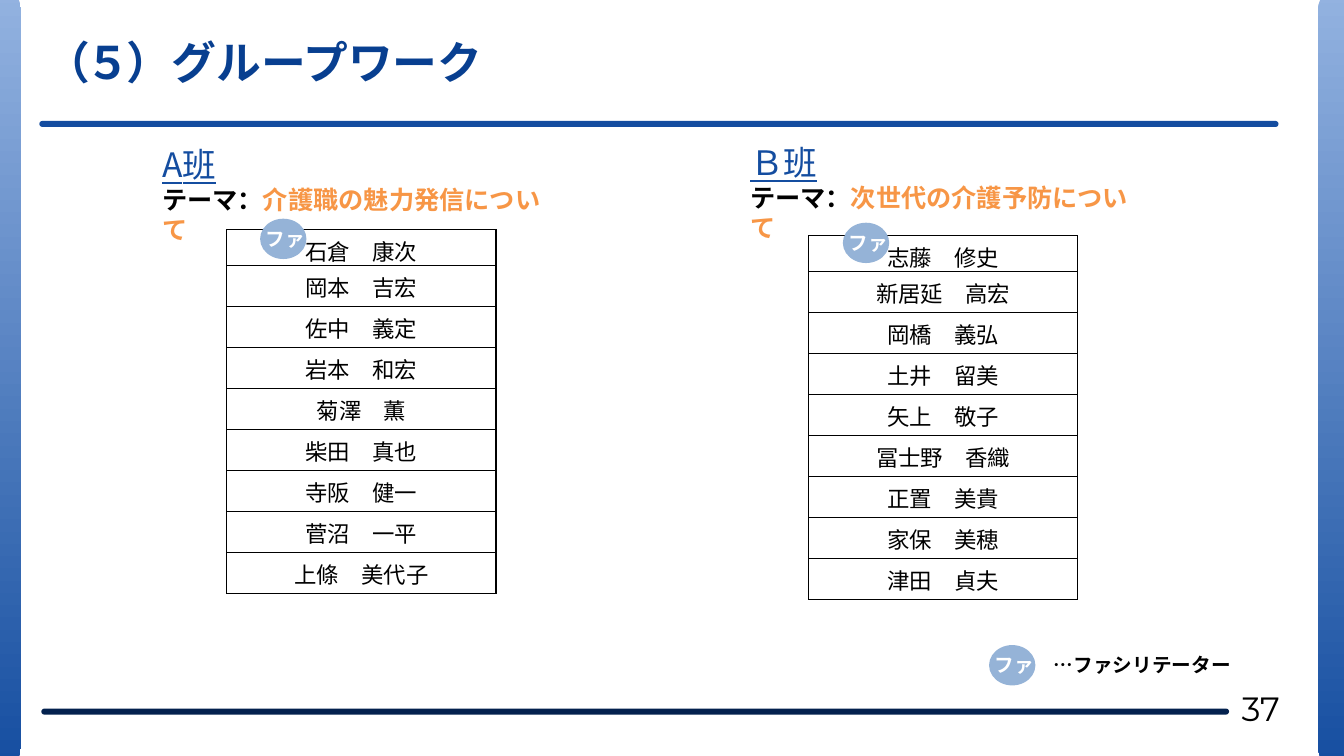
import dataclasses
import typing

import pptx
import pptx.dml.color
import pptx.enum.shapes
import pptx.enum.text
import pptx.oxml.ns
import pptx.oxml.xmlchemy
import pptx.util
import lxml.etree

Inches = pptx.util.Inches
Pt = pptx.util.Pt
Shape = pptx.enum.shapes.MSO_SHAPE
Align = pptx.enum.text.PP_ALIGN
Anchor = pptx.enum.text.MSO_ANCHOR
qn = pptx.oxml.ns.qn

COLORS = {
    "blue": "144DA0", "sky": "95B4E1", "navy": "03214E", "title": "083F90",
    "orange": "F79646", "badge": "95B3D7", "black": "000000", "white": "FFFFFF",
}
NOTO = "Noto Sans CJK JP"

# Text formats
STYLES: dict[str, dict[str, typing.Any]] = {
    "title": {"size": Pt(32), "bold": True, "name": NOTO},
    "team": {"size": Pt(24), "underline": True, "name": NOTO},
    "theme": {"size": Pt(18), "bold": True, "name": "Calibri"},
    "member": {"size": Pt(16), "name": NOTO},
    "badge": {"size": Pt(14), "bold": True, "name": NOTO},
    "page": {"size": Pt(24), "name": "Montserrat"},
}


@dataclasses.dataclass
class Box:
    left: float
    top: float
    width: float
    height: float

    def place(self) -> tuple:
        return tuple(Inches(v) for v in (self.left, self.top, self.width, self.height))


@dataclasses.dataclass
class Part:
    text: str
    style: str
    color: str = "black"
    space: int = 0


@dataclasses.dataclass
class Team:
    name: str
    theme: str
    head: Box
    grid: Box
    mark: tuple[float, float]
    people: list[str]


TEAMS = [
    Team("A班", "介護職の魅力発信について", Box(1.51, 1.38, 4.01, 0.81),
         Box(2.25, 2.28, 2.67, 3.61), (2.58, 2.17),
         ["石倉　康次", "岡本　吉宏", "佐中　義定", "岩本　和宏", "菊澤　薫",
          "柴田　真也", "寺阪　健一", "菅沼　一平", "上條　美代子"]),
    Team("Ｂ班", "次世代の介護予防について", Box(7.34, 1.36, 4.01, 1.21),
         Box(8.02, 2.34, 2.67, 3.61), (8.36, 2.21),
         ["志藤　修史", "新居延　高宏", "岡橋　義弘", "土井　留美", "矢上　敬子",
          "冨士野　香織", "正置　美貴", "家保　美穂", "津田　貞夫"]),
]


def tint(name: str) -> pptx.dml.color.RGBColor:
    return pptx.dml.color.RGBColor.from_string(COLORS[name])


def write(para, parts: list[Part]) -> None:
    for part in parts:
        run = para.add_run()
        run.text = part.text
        for key, value in STYLES[part.style].items():
            setattr(run.font, key, value)
        run.font.color.rgb = tint(part.color)
        props = run.font._element
        latin = props.find(qn("a:latin"))
        east = lxml.etree.Element(qn("a:ea"), typeface=STYLES[part.style]["name"])
        latin.addnext(east)
        if part.space:
            props.set("spc", str(part.space * 100))


def label(slide, box: Box, lines: list[list[Part]], anchor=Anchor.TOP, align=Align.LEFT):
    frame = slide.shapes.add_textbox(*box.place()).text_frame
    frame.word_wrap = True
    frame.vertical_anchor = anchor
    for num, parts in enumerate(lines):
        para = frame.add_paragraph() if num else frame.paragraphs[0]
        para.alignment = align
        write(para, parts)
    return frame


def form(slide, kind, box: Box, color: str):
    shape = slide.shapes.add_shape(kind, *box.place())
    shape.shadow.inherit = False
    shape.fill.solid()
    shape.fill.fore_color.rgb = tint(color)
    shape.line.fill.background()
    return shape


def pill(slide, box: Box, color: str):
    shape = form(slide, Shape.ROUNDED_RECTANGLE, box, color)
    shape.adjustments[0] = 0.5
    return shape


def pillar(slide, left: float) -> None:
    fill = pill(slide, Box(left, -0.21, 0.67, 7.92), "blue").fill
    fill.gradient()
    fill.gradient_angle = 270
    for stop, color in zip(fill.gradient_stops, ("sky", "blue")):
        stop.color.rgb = tint(color)


def badge(slide, left: float, top: float, width: float = 0.67, note: str = "") -> None:
    form(slide, Shape.FLOWCHART_CONNECTOR, Box(left, top, 0.46, 0.4), "badge")
    parts = [Part("ファ", "badge", "white")]
    if note:
        parts = [Part("ファ　", "badge", "white"), Part(note, "badge")]
    label(slide, Box(left - 0.04, top + 0.03, width, 0.34), [parts])


def edge(cell) -> None:
    props = cell._tc.get_or_add_tcPr()
    for num, side in enumerate(("lnL", "lnR", "lnT", "lnB")):
        line = lxml.etree.Element(qn(f"a:{side}"), w=str(Pt(1)))
        fill = lxml.etree.SubElement(line, qn("a:solidFill"))
        lxml.etree.SubElement(fill, qn("a:srgbClr"), val=COLORS["black"])
        props.insert(num, line)


def roster(slide, box: Box, people: list[str]) -> None:
    table = slide.shapes.add_table(len(people), 1, *box.place()).table
    table.first_row = table.horz_banding = False
    first = 0.35
    rest = (box.height - first) / (len(people) - 1)
    for num, person in enumerate(people):
        table.rows[num].height = Inches(rest if num else first)
        cell = table.cell(num, 0)
        cell.margin_top, cell.margin_bottom = Inches(0.05), 0
        cell.fill.background()
        edge(cell)
        para = cell.text_frame.paragraphs[0]
        para.alignment = Align.CENTER
        write(para, [Part(person, "member")])


def main() -> None:
    deck = pptx.Presentation()
    deck.slide_width, deck.slide_height = Inches(13.33), Inches(7.5)
    slide = deck.slides.add_slide(deck.slide_layouts[6])

    # Frame: side pillars and rules
    for left in (-0.46, 13.07):
        pillar(slide, left)
    pill(slide, Box(0.39, 1.2, 12.29, 0.06), "blue")
    pill(slide, Box(0.41, 7.03, 11.78, 0.06), "navy")

    # Title and page number
    title = label(slide, Box(0.35, 0.31, 11.65, 0.79),
                  [[Part("（５）", "title", "title", -3),
                    Part("グループワーク", "title", "title")]], Anchor.MIDDLE)
    title.paragraphs[0].line_spacing = Pt(25)
    label(slide, Box(12.09, 6.82, 0.83, 0.4), [[Part("37", "page")]],
          Anchor.MIDDLE, Align.CENTER)

    # Teams
    for team in TEAMS:
        label(slide, team.head, [
            [Part(team.name, "team", "blue")],
            [Part("テーマ：", "theme"), Part(team.theme, "theme", "orange")],
        ])
        roster(slide, team.grid, team.people)
        badge(slide, *team.mark)

    # Legend
    badge(slide, 9.81, 6.4, 2.93, "…ファシリテーター")
    deck.save("out.pptx")


if __name__ == "__main__":
    main()
